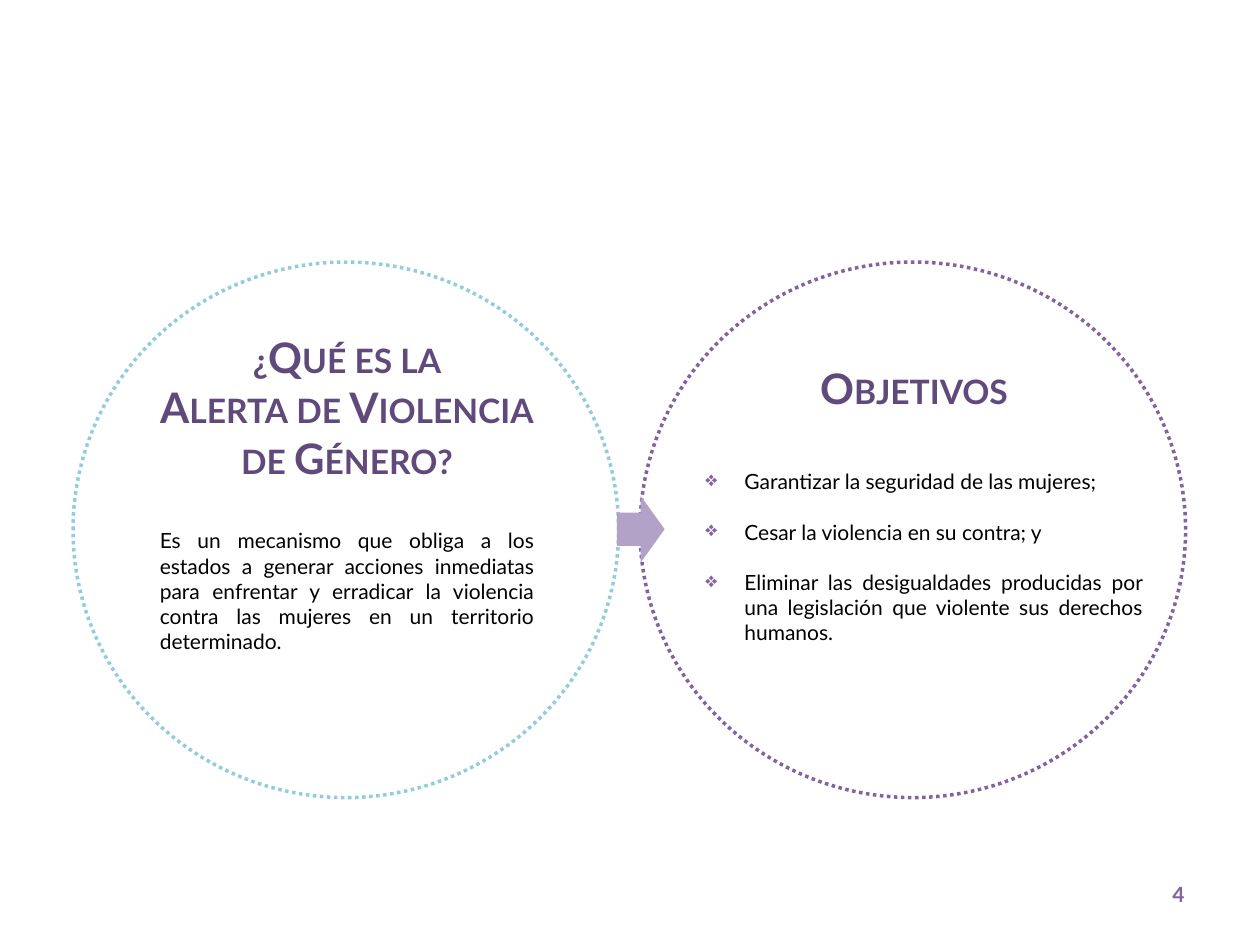
import pptx
import pptx.util
import pptx.dml.color
import pptx.enum.dml
import pptx.enum.shapes
import pptx.enum.text
import pptx.oxml.ns
from lxml import etree

COLORS = {
    "white": "FFFFFF", "black": "000000", "aqua": "93CDDD",
    "purple": "8064A2", "dark": "604A7B", "lilac": "B3A2C7",
}
FONT = "Lato"
CIRCLES = [(5.08, "purple"), (0.58, "aqua")]
CIRCLE_TOP, CIRCLE_W, CIRCLE_H = 2.08, 4.33, 4.25
ARROW = (4.82, 4.01, 0.53, 0.38)

HEADING = dict(size=24, color="dark", bold=True, small_caps=True, align="CENTER")
TEXTS = [
    ((0.67, 2.58, 4.17, 1.31),
     ["¿Qué es la", "Alerta de Violencia", "de Género?"], HEADING),
    ((1.17, 4.14, 3.17, 1.11),
     ["Es un mecanismo que obliga a los estados a generar acciones inmediatas "
      "para enfrentar y erradicar la violencia contra las mujeres en un "
      "territorio determinado."], dict(align="JUSTIFY")),
    ((5.17, 2.83, 4.17, 0.5), ["Objetivos"], HEADING),
    ((5.5, 3.67, 3.67, 1.51),
     ["Garantizar la seguridad de las mujeres;",
      "Cesar la violencia en su contra; y",
      "Eliminar las desigualdades producidas por una legislación que violente "
      "sus derechos humanos."],
     dict(align="JUSTIFY", bullet="❖", gap=14.4)),
    ((7.17, 6.95, 2.33, 0.4), ["4"],
     dict(color="purple", bold=True, align="RIGHT")),
]

Inches = pptx.util.Inches
Pt = pptx.util.Pt
qn = pptx.oxml.ns.qn
SHAPE = pptx.enum.shapes.MSO_SHAPE


def rgb(name):
    return pptx.dml.color.RGBColor.from_string(COLORS[name])


def add_bullet(p, char):
    pPr = p._p.get_or_add_pPr()
    pPr.set("marL", str(Inches(0.31)))
    pPr.set("indent", str(-Inches(0.31)))
    clr = etree.SubElement(pPr, qn("a:buClr"))
    etree.SubElement(clr, qn("a:srgbClr"), val=COLORS["purple"])
    etree.SubElement(pPr, qn("a:buChar"), char=char)


def add_text(slide, box, lines, size=12, color="black", bold=False,
             small_caps=False, align="LEFT", bullet=None, gap=0):
    tf = slide.shapes.add_textbox(*map(Inches, box)).text_frame
    tf.word_wrap = True
    for i, line in enumerate(lines):
        p = tf.add_paragraph() if i else tf.paragraphs[0]
        p.alignment = getattr(pptx.enum.text.PP_ALIGN, align)
        if bullet:
            add_bullet(p, bullet)
        if i and gap:
            p.space_before = Pt(gap)
        r = p.add_run()
        r.text = line
        r.font.name = FONT
        r.font.size = Pt(size)
        r.font.bold = bold
        r.font.color.rgb = rgb(color)
        if small_caps:
            r.font._element.set("cap", "small")


def add_filled(slide, kind, box, fill):
    sp = slide.shapes.add_shape(kind, *map(Inches, box))
    sp.shadow.inherit = False
    sp.fill.solid()
    sp.fill.fore_color.rgb = rgb(fill)
    sp.line.fill.background()
    return sp


def main():
    prs = pptx.Presentation()
    prs.slide_width, prs.slide_height = Inches(10), Inches(7.5)
    s = prs.slides.add_slide(prs.slide_layouts[6])
    for left, color in CIRCLES:
        box = (left, CIRCLE_TOP, CIRCLE_W, CIRCLE_H)
        sp = add_filled(s, SHAPE.OVAL, box, "white")
        sp.line.color.rgb = rgb(color)
        sp.line.width = Pt(2)
        sp.line.dash_style = pptx.enum.dml.MSO_LINE.ROUND_DOT
    for box, lines, style in TEXTS:
        add_text(s, box, lines, **style)
    arrow = add_filled(s, SHAPE.DOWN_ARROW, ARROW, "lilac")
    arrow.rotation = 270
    prs.save("out.pptx")


if __name__ == "__main__":
    main()
